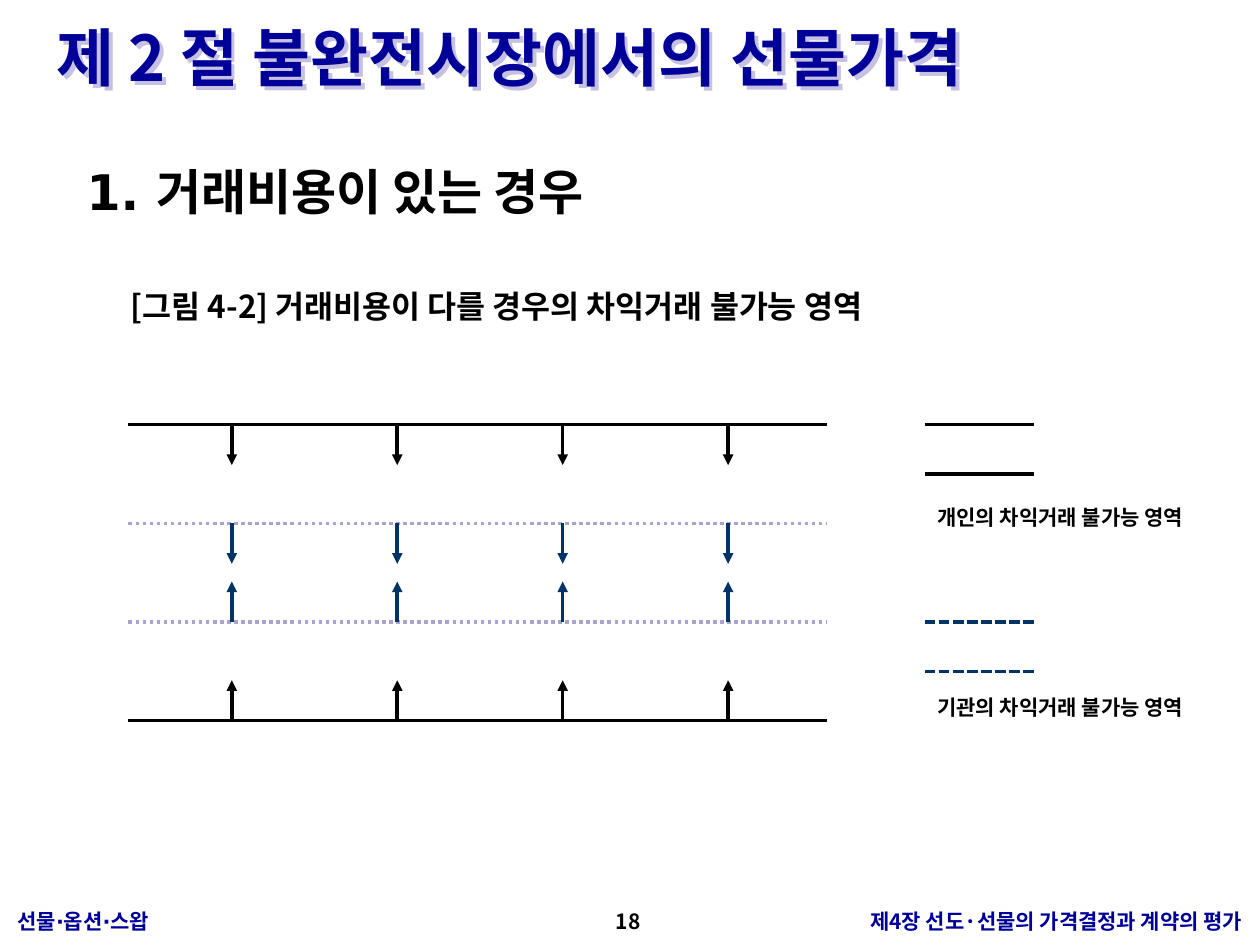
from dataclasses import dataclass

from lxml import etree
from pptx import Presentation
from pptx.dml.color import RGBColor
from pptx.enum.dml import MSO_LINE
from pptx.enum.shapes import MSO_CONNECTOR
from pptx.enum.text import MSO_ANCHOR, MSO_AUTO_SIZE, PP_ALIGN
from pptx.oxml.ns import qn
from pptx.util import Inches, Pt

LEFT, MID, RIGHT = PP_ALIGN.LEFT, PP_ALIGN.CENTER, PP_ALIGN.RIGHT
TOP, NONE = MSO_ANCHOR.TOP, MSO_AUTO_SIZE.NONE
STRAIGHT = MSO_CONNECTOR.STRAIGHT
DOT, DASH = MSO_LINE.ROUND_DOT, MSO_LINE.SQUARE_DOT
TITLE_ONLY = 5


@dataclass(frozen=True)
class Theme:
    ink: str = "000000"
    blue: str = "000099"
    navy: str = "003366"
    lilac: str = "A9A4CF"
    shade: str = "C6C0E2"
    sans: str = "Noto Sans CJK KR"
    wide: str = "DejaVu Sans"
    title: int = 36
    head: int = 28
    sub: int = 18
    small: int = 12
    line: int = 2


THEME = Theme()


def put(obj, **values):
    for name, value in values.items():
        setattr(obj, name, value)


def write(shape, text, size, color=THEME.ink, face=THEME.sans, align=LEFT, lead=None):
    frame = shape.text_frame
    put(frame, word_wrap=True, auto_size=NONE, vertical_anchor=TOP,
        margin_left=Inches(0.1), margin_right=Inches(0.1),
        margin_top=Inches(0.05), margin_bottom=Inches(0.05))
    para = frame.paragraphs[0]
    put(para, alignment=align, line_spacing=lead)
    run = para.add_run()
    run.text = text
    put(run.font, name=face, size=Pt(size), bold=True)
    run.font.color.rgb = RGBColor.from_string(color)
    east = etree.SubElement(run.font._element, qn("a:ea"))
    east.set("typeface", THEME.sans)


def label(slide, box, text, size, **style):
    shape = slide.shapes.add_textbox(*map(Inches, box))
    write(shape, text, size, **style)


def rule(slide, start, end, color, dash=None, arrow=False):
    ends = map(Inches, (*start, *end))
    wire = slide.shapes.add_connector(STRAIGHT, *ends)
    line = wire.line
    line.color.rgb = RGBColor.from_string(color)
    put(line, width=Pt(THEME.line), dash_style=dash)
    if arrow:
        etree.SubElement(line._ln, qn("a:tailEnd"), type="triangle")
    etree.SubElement(wire._element.spPr, qn("a:effectLst"))


def shade(shape):
    """Cast a soft drop shadow from the text of an unfilled shape."""
    shape.fill.background()
    effects = etree.SubElement(shape._element.spPr, qn("a:effectLst"))
    cast = etree.SubElement(effects, qn("a:outerShdw"),
                            dist="35921", dir="2700000", algn="ctr")
    etree.SubElement(cast, qn("a:srgbClr"), val=THEME.shade)


def header(slide, box):
    left, top, width, height = box
    title = slide.shapes.title
    put(title, left=Inches(left), top=Inches(top),
        width=Inches(width), height=Inches(height))
    write(title, "제 2 절 불완전시장에서의 선물가격", THEME.title, color=THEME.blue)
    shade(title)


def intro(slide, box):
    left, top, width, height = box
    label(slide, (left, top, width, 0.4 * height),
          "1. 거래비용이 있는 경우", THEME.head, face=THEME.wide)
    label(slide, (left + 0.35, top + 0.6 * height, width, 0.4 * height),
          "[그림 4-2] 거래비용이 다를 경우의 차익거래 불가능 영역",
          THEME.sub, lead=1.5)


def bands(slide, box):
    """Four price bounds, each with a row of arrows pointing inward."""
    left, top, width, height = box
    row = height / 3
    bounds = [(THEME.ink, None, THEME.ink, 1), (THEME.lilac, DOT, THEME.navy, 1),
              (THEME.lilac, DOT, THEME.navy, -1), (THEME.ink, None, THEME.ink, -1)]
    for i, (color, dash, tint, way) in enumerate(bounds):
        y = top + i * row
        rule(slide, (left, y), (left + width, y), color, dash)
        for col in range(4):
            x = left + width * (0.148 + 0.237 * col)
            rule(slide, (x, y), (x, y + way * 0.41 * row), tint, arrow=True)


def legend(slide, box):
    left, top, width, height = box
    row = height / 3
    keys = [("개인의 차익거래 불가능 영역", THEME.ink, None, 0, 0.75),
            ("기관의 차익거래 불가능 영역", THEME.navy, DASH, 2, 2.67)]
    for text, color, dash, first, below in keys:
        for step in (first, first + 0.5):
            y = top + step * row
            rule(slide, (left, y), (left + 0.37 * width, y), color, dash)
        label(slide, (left, top + below * row, width, 0.3), text, THEME.small)


def footer(slide, box):
    left, top, width, height = box
    parts = [("선물∙옵션∙스왑", 0, 0.34, LEFT, THEME.blue),
             ("18", 0.467, 0.063, MID, THEME.ink),
             ("제4장 선도·선물의 가격결정과 계약의 평가", 0.571, 0.429, RIGHT, THEME.blue)]
    for text, start, share, align, color in parts:
        label(slide, (left + start * width, top, share * width, height),
              text, THEME.small, color=color, align=align)


def main():
    deck = Presentation()
    put(deck, slide_width=Inches(10), slide_height=Inches(7.5))
    slide = deck.slides.add_slide(deck.slide_layouts[TITLE_ONLY])
    header(slide, (0.35, 0.1, 9.45, 0.7))
    intro(slide, (0.59, 1.23, 8.03, 1.42))
    bands(slide, (1.02, 3.37, 5.54, 2.35))
    legend(slide, (7.34, 3.37, 2.34, 2.35))
    footer(slide, (0.04, 7.16, 9.92, 0.3))
    deck.save("out.pptx")


if __name__ == "__main__":
    main()
